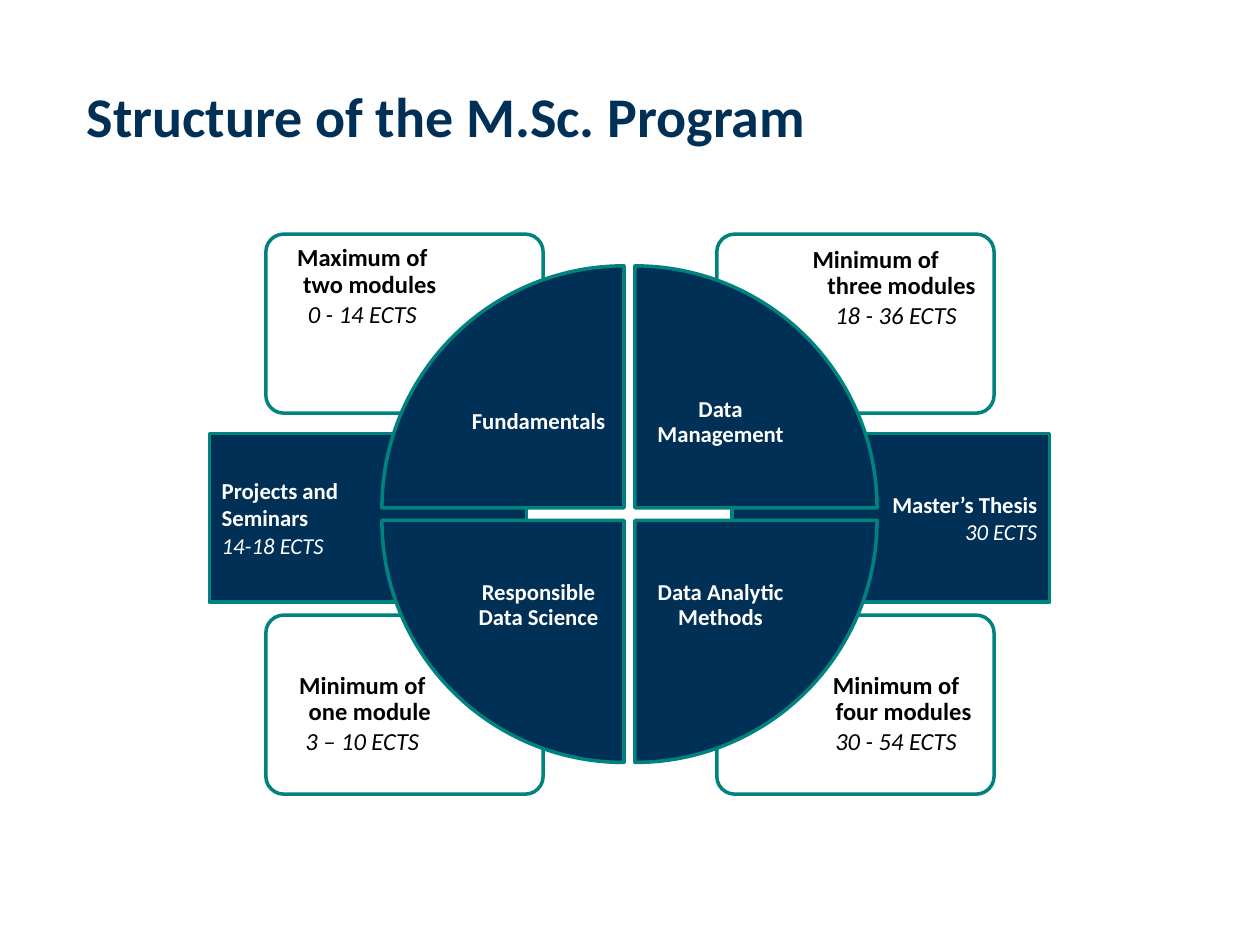
import pptx
import pptx.dml.color
import pptx.enum.shapes
import pptx.enum.text
import pptx.util

Cm = pptx.util.Cm
Pt = pptx.util.Pt
SHAPE = pptx.enum.shapes.MSO_SHAPE
ALIGN = pptx.enum.text.PP_ALIGN
ANCHOR = pptx.enum.text.MSO_ANCHOR

NAVY = pptx.dml.color.RGBColor(0x00, 0x30, 0x56)
TEAL = pptx.dml.color.RGBColor(0x00, 0x83, 0x7F)
WHITE = pptx.dml.color.RGBColor(0xFF, 0xFF, 0xFF)
BLACK = pptx.dml.color.RGBColor(0x00, 0x00, 0x00)

# Text formats
BOLD = {"name": "Calibri", "bold": True, "italic": False}
ITALIC = {"name": "Calibri", "bold": False, "italic": True}
CARD_SPACING = {"line_spacing": 0.9, "space_after": Pt(2)}
HANGING = {"marL": Cm(0.3), "indent": Cm(-0.3)}

# Column and row positions in cm: left/right, top/bottom
CARD_X, CARD_Y = (5.36, 14.45), (4.72, 12.4)
CARD_TEXT_X, CARD_TEXT_Y = (5.44, 16.2), (4.8, 13.39)
WEDGE_X, WEDGE_Y = (7.7, 12.8), (5.36, 10.49)
WEDGE_SIZE, LABEL_SIZE = 4.88, 3.45

# Column, row, wedge rotation, area, modules, credits, alignment of modules, inset
AREAS = [
    (0, 0, 0, "Fundamentals", "Maximum of two modules", "0 - 14 ECTS", ALIGN.CENTER, 0.15),
    (1, 0, 90, "Data Management", "Minimum of three modules", "18 - 36 ECTS", ALIGN.LEFT, 0.18),
    (1, 1, 180, "Data Analytic Methods", "Minimum of four modules", "30 - 54 ECTS", ALIGN.CENTER, 0.18),
    (0, 1, 270, "Responsible Data Science", "Minimum of one module", "3 – 10 ECTS", ALIGN.CENTER, 0.18),
]


def apply(target, values):
    for attribute, value in values.items():
        setattr(target, attribute, value)


def add_outlined(slide, kind, left, top, width, height, fill):
    shape = slide.shapes.add_shape(kind, Cm(left), Cm(top), Cm(width), Cm(height))
    shape.shadow.inherit = False
    shape.fill.solid()
    shape.fill.fore_color.rgb = fill
    shape.line.color.rgb = TEAL
    shape.line.width = Pt(2)
    return shape


def add_text_box(slide, left, top, width, height, inset=None):
    frame = slide.shapes.add_textbox(Cm(left), Cm(top), Cm(width), Cm(height)).text_frame
    frame.word_wrap = True
    if inset is not None:
        for side in ("left", "top", "right", "bottom"):
            setattr(frame, f"margin_{side}", Cm(inset))
    return frame


def write(frame, lines, size, color, spacing=None, hanging=None):
    """Fill the frame with (text, font format, alignment) lines."""
    for index, (text, font, align) in enumerate(lines):
        paragraph = frame.add_paragraph() if index else frame.paragraphs[0]
        apply(paragraph, {"alignment": align, **(spacing or {})})
        for attribute, value in (hanging or {}).items():
            paragraph._p.get_or_add_pPr().set(attribute, str(int(value)))
        run = paragraph.add_run()
        run.text = text
        apply(run.font, {"size": Pt(size), **font})
        run.font.color.rgb = color


def add_bar(slide, left, lines):
    bar = add_outlined(slide, SHAPE.RECTANGLE, left, 8.74, 6.4, 3.4, NAVY)
    bar.text_frame.vertical_anchor = ANCHOR.MIDDLE
    write(bar.text_frame, lines, 13, WHITE)


def add_card(slide, column, row, modules, credits, align, inset):
    card = add_outlined(slide, SHAPE.ROUNDED_RECTANGLE, CARD_X[column], CARD_Y[row], 5.59, 3.61, WHITE)
    card.adjustments[0] = 0.1
    frame = add_text_box(slide, CARD_TEXT_X[column], CARD_TEXT_Y[row], 3.73, 2.54, inset)
    lines = [(modules, BOLD, align), (credits, ITALIC, ALIGN.CENTER)]
    write(frame, lines, 14, BLACK, CARD_SPACING, HANGING)


def add_wedge(slide, column, row, rotation, area):
    left, top = WEDGE_X[column], WEDGE_Y[row]
    wedge = add_outlined(slide, SHAPE.PIE_WEDGE, left, top, WEDGE_SIZE, WEDGE_SIZE, NAVY)
    wedge.rotation = rotation
    # The label sits in the wedge corner nearest the centre of the circle
    shift = WEDGE_SIZE - LABEL_SIZE
    label = add_text_box(slide, left + shift * (1 - column), top + shift * (1 - row),
                         LABEL_SIZE, LABEL_SIZE, 0.25)
    label.vertical_anchor = ANCHOR.MIDDLE
    write(label, [(area, BOLD, ALIGN.CENTER)], 13, WHITE, {"line_spacing": 0.9})


def main():
    presentation = pptx.Presentation()
    apply(presentation, {"slide_width": Cm(25.4), "slide_height": Cm(19.05)})
    slide = presentation.slides.add_slide(presentation.slide_layouts[6])

    # Side bars
    add_bar(slide, 4.22, [("Projects and", BOLD, ALIGN.LEFT), ("Seminars", BOLD, ALIGN.LEFT),
                          ("14-18 ECTS", ITALIC, ALIGN.LEFT)])
    add_bar(slide, 14.76, [("Master’s Thesis", BOLD, ALIGN.RIGHT), ("30 ECTS", ITALIC, ALIGN.RIGHT)])

    # Title
    title = add_text_box(slide, 1.5, 1.52, 19, 1.6)
    write(title, [("Structure of the M.Sc. Program", BOLD, ALIGN.LEFT)], 32, NAVY)

    # Corner cards, then the circle over them
    for column, row, _, _, modules, credits, align, inset in AREAS:
        add_card(slide, column, row, modules, credits, align, inset)
    for column, row, rotation, area, *_ in AREAS:
        add_wedge(slide, column, row, rotation, area)

    presentation.save("out.pptx")


if __name__ == "__main__":
    main()
